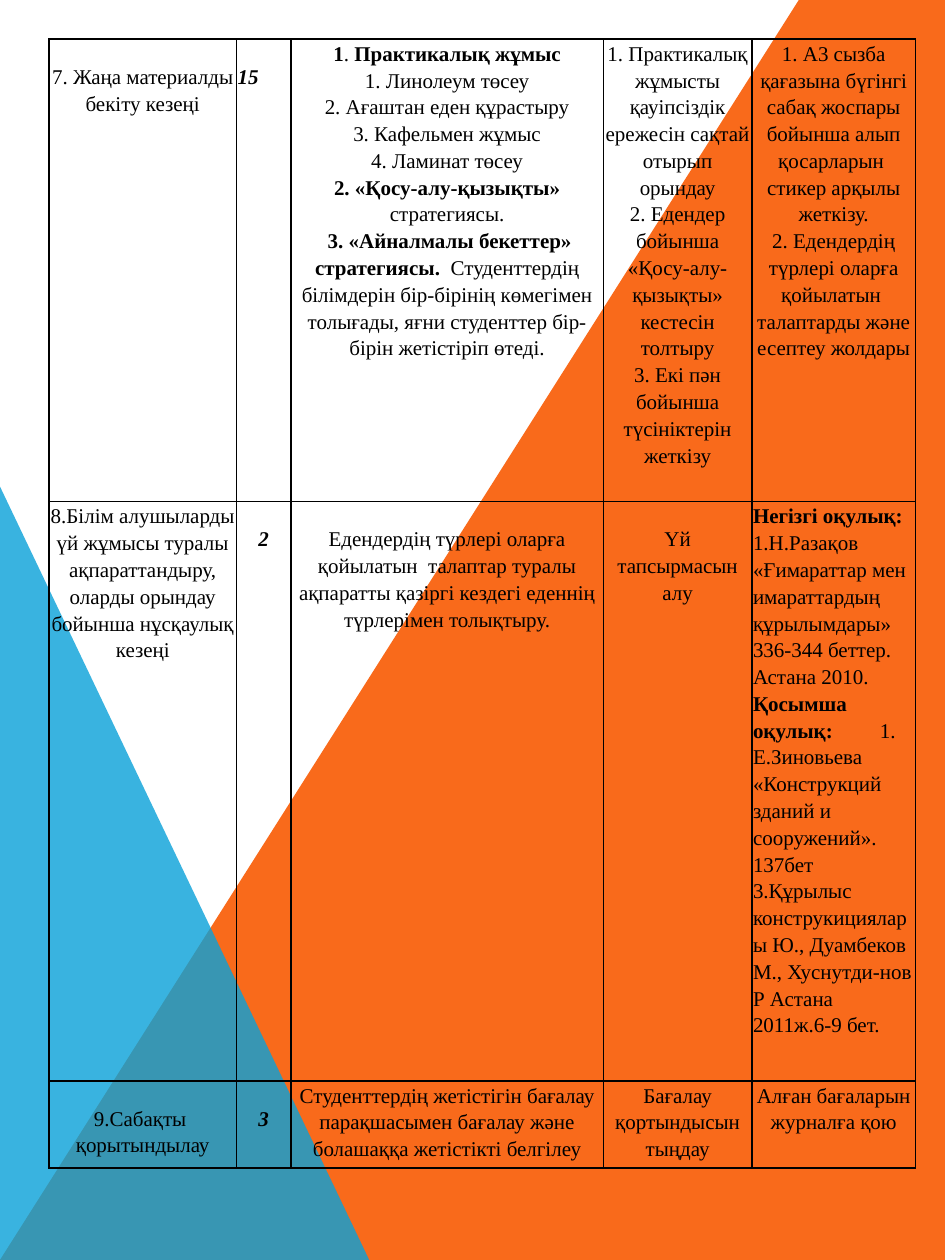
from dataclasses import dataclass
from typing import NamedTuple

from lxml.etree import SubElement
from pptx import Presentation
from pptx.dml.color import RGBColor
from pptx.enum.shapes import MSO_SHAPE as SHAPE
from pptx.enum.text import PP_ALIGN as ALIGN
from pptx.oxml.ns import qn
from pptx.util import Pt

BLACK = RGBColor(0x00, 0x00, 0x00)
ORANGE = RGBColor(0xF9, 0x6A, 0x1B)
BLUE = RGBColor(0x08, 0xA1, 0xD9)

WIDTH, HEIGHT = 540, 720
TABLE_LEFT = 28.1
COLUMNS = (107, 31.2, 178.6, 84.8, 93.6)
LINE_DROP = 13.2
TAB_STOP = 72.5
FONT = {"name": "Times New Roman", "size": Pt(12)}
MARGINS = {"margin_left": Pt(0.7), "margin_right": Pt(0.7), "margin_bottom": Pt(0)}


class Run(NamedTuple):
    text: str
    bold: bool = False
    italic: bool = False


@dataclass
class Cell:
    paragraphs: list[list[Run]]
    top: float = 0
    align: ALIGN = ALIGN.CENTER
    after: float = 0


@dataclass
class Row:
    height: float
    cells: list[Cell]


def plain(*lines: str, **layout) -> Cell:
    return Cell([[Run(line)] for line in lines], **layout)


def minutes(value: str, align: ALIGN = ALIGN.CENTER) -> Cell:
    return Cell([[Run(value, True, True)]], LINE_DROP, align)


PRACTICE = Cell([
    [Run("1", True), Run("."), Run(" Практикалық жұмыс", True)],
    [Run("1. Линолеум төсеу")],
    [Run("2. Ағаштан еден құрастыру")],
    [Run("3. Кафельмен жұмыс")],
    [Run("4. Ламинат төсеу")],
    [Run("2. «Қосу-алу-қызықты» ", True), Run("стратегиясы.")],
    [Run(" "), Run("3. «Айналмалы бекеттер» стратегиясы. ", True),
     Run(" Студенттердің білімдерін бір-бірінің көмегімен толығады, "
         "яғни студенттер бір-бірін жетістіріп өтеді.")],
])

TEXTBOOKS = Cell([
    [Run("Негізгі оқулық:", True),
     Run(" 1.Н.Разақов «Ғимараттар мен имараттардың  құрылымдары»  "
         "336-344 беттер.  Астана 2010. "),
     Run("Қосымша оқулық:\t", True),
     Run("1. Е.Зиновьева «Конструкций зданий и сооружений».  137бет")],
    [Run("3.Құрылыс конструкициялары Ю., Дуамбеков М., Хуснутди-нов Р "
         "Астана 2011ж.6-9 бет.")],
], align=ALIGN.LEFT)

REINFORCEMENT = [
    Row(264.4, [
        plain("7.\u00a0Жаңа материалды бекіту кезеңі", top=LINE_DROP),
        minutes("15", ALIGN.LEFT),
        PRACTICE,
        plain("1. Практикалық жұмысты қауіпсіздік ережесін сақтай отырып орындау",
              "2. Едендер бойынша «Қосу-алу-қызықты» кестесін толтыру",
              "3. Екі пән бойынша түсініктерін жеткізу"),
        plain("1. А3 сызба қағазына бүгінгі сабақ жоспары бойынша алып "
              "қосарларын  стикер арқылы жеткізу.",
              "2. Едендердің түрлері оларға қойылатын  талаптарды және "
              "есептеу жолдары"),
    ]),
]

CONCLUSION = [
    Row(331, [
        plain("8.Білім алушыларды үй жұмысы туралы ақпараттандыру, оларды "
              "орындау бойынша нұсқаулық кезеңі"),
        minutes("2"),
        plain("Едендердің түрлері оларға қойылатын  талаптар туралы ақпаратты "
              "қазіргі кездегі еденнің түрлерімен толықтыру.", top=LINE_DROP),
        plain("Үй тапсырмасын алу", top=LINE_DROP),
        TEXTBOOKS,
    ]),
    Row(49.7, [
        plain("9.Сабақты  қорытындылау", top=LINE_DROP),
        minutes("3"),
        plain("Студенттердің жетістігін бағалау парақшасымен бағалау және "
              "болашаққа жетістікті белгілеу"),
        plain("Бағалау қортындысын тыңдау"),
        plain("Алған бағаларын журналға қою", after=10),
    ]),
]


def paint(sp, color: RGBColor) -> None:
    sp.shadow.inherit = False
    sp.fill.solid()
    sp.fill.fore_color.rgb = color
    sp.line.fill.background()


def draw_backdrop(s) -> None:
    builder = s.shapes.build_freeform(Pt(0), Pt(HEIGHT))
    corners = ((456.5, 0), (WIDTH, 0), (WIDTH, HEIGHT))
    builder.add_line_segments([(Pt(x), Pt(y)) for x, y in corners], close=True)
    paint(builder.convert_to_shape(), ORANGE)

    sp = s.shapes.add_shape(SHAPE.RIGHT_TRIANGLE, Pt(0), Pt(278), Pt(211), Pt(442))
    paint(sp, BLUE)
    color = sp.fill._xPr.find(qn("a:solidFill"))[0]
    SubElement(color, qn("a:alpha"), val="80000")


def add_borders(cell) -> None:
    tc_pr = cell._tc.get_or_add_tcPr()
    for i, side in enumerate(("a:lnL", "a:lnR", "a:lnT", "a:lnB")):
        ln = SubElement(tc_pr, qn(side), w=str(Pt(1)))
        fill = SubElement(ln, qn("a:solidFill"))
        SubElement(fill, qn("a:srgbClr"), val=str(BLACK))
        tc_pr.remove(ln)
        tc_pr.insert(i, ln)


def write_cell(cell, content: Cell) -> None:
    for name, value in {**MARGINS, "margin_top": Pt(content.top)}.items():
        setattr(cell, name, value)
    cell.fill.background()
    add_borders(cell)
    tf = cell.text_frame
    for i, runs in enumerate(content.paragraphs):
        p = tf.add_paragraph() if i else tf.paragraphs[0]
        if any("\t" in run.text for run in runs):
            tabs = SubElement(p._p.get_or_add_pPr(), qn("a:tabLst"))
            SubElement(tabs, qn("a:tab"), pos=str(Pt(TAB_STOP)), algn="l")
        layout = {"alignment": content.align, "line_spacing": 1.15,
                  "space_after": Pt(content.after)}
        for name, value in layout.items():
            setattr(p, name, value)
        for run in runs:
            r = p.add_run()
            r.text = run.text
            for name, value in {**FONT, "bold": run.bold, "italic": run.italic}.items():
                setattr(r.font, name, value)
            r.font.color.rgb = BLACK


def draw_table(s, top: float, rows: list[Row]) -> None:
    height = sum(row.height for row in rows)
    frame = s.shapes.add_table(len(rows), len(COLUMNS), Pt(TABLE_LEFT), Pt(top),
                               Pt(sum(COLUMNS)), Pt(height))
    table = frame.table
    table.first_row = table.horz_banding = False
    for column, width in zip(table.columns, COLUMNS):
        column.width = Pt(width)
    for table_row, row in zip(table.rows, rows):
        table_row.height = Pt(row.height)
        for cell, content in zip(table_row.cells, row.cells):
            write_cell(cell, content)


def main() -> None:
    prs = Presentation()
    prs.slide_width, prs.slide_height = Pt(WIDTH), Pt(HEIGHT)
    s = prs.slides.add_slide(prs.slide_layouts[6])
    draw_backdrop(s)
    draw_table(s, 286.7, CONCLUSION)
    draw_table(s, 22.3, REINFORCEMENT)
    prs.save("out.pptx")


if __name__ == "__main__":
    main()
